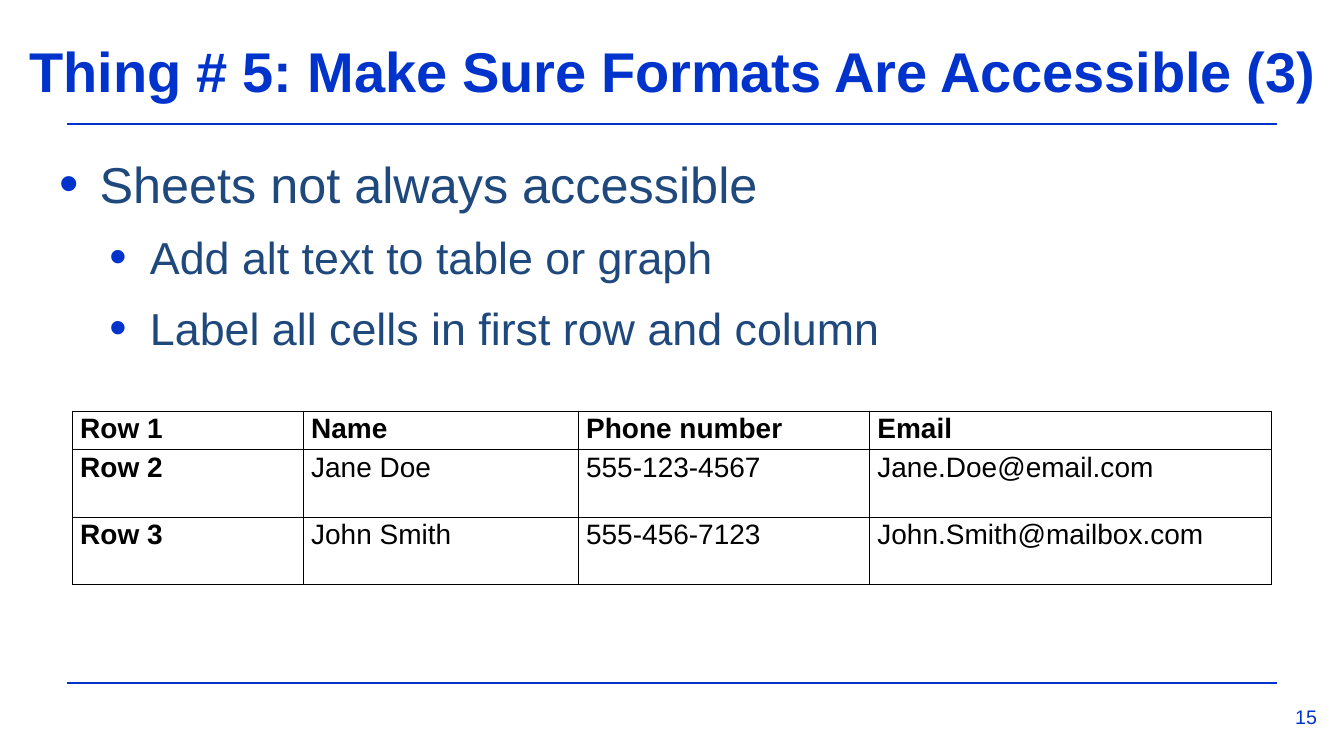
from lxml import etree
from pptx import Presentation
from pptx.dml.color import RGBColor
from pptx.enum import shapes, text
from pptx.oxml import ns
from pptx.util import Cm, Pt

TITLE = "Thing # 5: Make Sure Formats Are Accessible (3)"
PAGE = "15"
BULLETS = [  # level, text
    (0, "Sheets not always accessible"),
    (1, "Add alt text to table or graph"),
    (1, "Label all cells in first row and column"),
]
CONTACTS = [
    ("Row 1", "Name", "Phone number", "Email"),
    ("Row 2", "Jane Doe", "555-123-4567", "Jane.Doe@email.com"),
    ("Row 3", "John Smith", "555-456-7123", "John.Smith@mailbox.com"),
]
COL_WIDTHS = (5.82, 6.93, 7.34, 10.13)
ROW_HEIGHTS = (0.97, 1.7, 1.7)
RULE_LEFT, RULE_WIDTH, RULE_TOPS = 1.7, 30.48, (3.12, 17.22)

THEME = {
    "font": "Arial",
    "accent": RGBColor(0x00, 0x33, 0xCC),
    "body": RGBColor(0x1F, 0x49, 0x7D),
    "ink": RGBColor(0x00, 0x00, 0x00),
    "title_size": 40,
    "level_sizes": (36, 32),
    "table_size": 20,
    "page_size": 14,
}


def set_all(obj, values):
    for name, value in values.items():
        setattr(obj, name, value)


def write(p, words, size, color, bold=False):
    r = p.add_run()
    r.text = words
    set_all(r.font, {"name": THEME["font"], "size": Pt(size), "bold": bold})
    r.font.color.rgb = color
    return r


def add_box(slide, left, top, width, height, inset_top=0):
    sp = slide.shapes.add_textbox(Cm(left), Cm(top), Cm(width), Cm(height))
    tf = sp.text_frame
    set_all(tf, {"word_wrap": True, "margin_left": 0, "margin_right": 0,
                 "margin_top": Cm(inset_top), "margin_bottom": 0})
    return tf


def add_bullet(p, level):
    pPr = p._p.get_or_add_pPr()
    pPr.set("marL", str(Cm(1.04 + 1.27 * level)))
    pPr.set("indent", str(-Cm(1.02)))
    color = etree.SubElement(pPr, ns.qn("a:buClr"))
    etree.SubElement(color, ns.qn("a:srgbClr"), val=str(THEME["accent"]))
    etree.SubElement(pPr, ns.qn("a:buSzPct"), val="110000")
    etree.SubElement(pPr, ns.qn("a:buFont"), typeface=THEME["font"])
    etree.SubElement(pPr, ns.qn("a:buChar"), char="•")


def add_borders(cell):
    tcPr = cell._tc.get_or_add_tcPr()
    for side in ("lnL", "lnR", "lnT", "lnB"):
        ln = etree.SubElement(tcPr, ns.qn("a:" + side), w=str(Pt(1)))
        fill = etree.SubElement(ln, ns.qn("a:solidFill"))
        etree.SubElement(fill, ns.qn("a:srgbClr"), val=str(THEME["ink"]))


def add_rule(slide, top):
    line = slide.shapes.add_connector(
        shapes.MSO_CONNECTOR.STRAIGHT, Cm(RULE_LEFT), Cm(top),
        Cm(RULE_LEFT + RULE_WIDTH), Cm(top))
    line.line.color.rgb = THEME["accent"]
    line.line.width = Pt(1.56)
    etree.SubElement(line._element.spPr, ns.qn("a:effectLst"))


def add_contacts(slide, left, top):
    """Table whose first row and first column are bold labels."""
    table = slide.shapes.add_table(
        len(CONTACTS), len(COL_WIDTHS), Cm(left), Cm(top),
        Cm(sum(COL_WIDTHS)), Cm(sum(ROW_HEIGHTS))).table
    set_all(table, {"first_row": False, "horz_banding": False})
    for col, width in zip(table.columns, COL_WIDTHS):
        col.width = Cm(width)
    for i, (row, height) in enumerate(zip(table.rows, ROW_HEIGHTS)):
        row.height = Cm(height)
        for j, cell in enumerate(row.cells):
            set_all(cell, {"margin_left": Cm(0.19), "margin_right": Cm(0.19),
                           "margin_top": 0, "margin_bottom": 0})
            add_borders(cell)
            cell.fill.background()
            p = cell.text_frame.paragraphs[0]
            p.line_spacing = 1.07
            write(p, CONTACTS[i][j], THEME["table_size"], THEME["ink"],
                  bold=i == 0 or j == 0)


def main():
    prs = Presentation()
    set_all(prs, {"slide_width": Cm(33.87), "slide_height": Cm(19.05)})
    slide = prs.slides.add_slide(prs.slide_layouts[6])

    for top in RULE_TOPS:
        add_rule(slide, top)

    p = add_box(slide, 0.08, 0.84, 33.73, 1.75, inset_top=0.08).paragraphs[0]
    p.alignment = text.PP_ALIGN.CENTER
    r = write(p, TITLE, THEME["title_size"], THEME["accent"], bold=True)
    r.font._element.set("spc", "-10")

    tf = add_box(slide, 1.47, 3.61, 31.85, 7.26, inset_top=0.24)
    for i, (level, words) in enumerate(BULLETS):
        p = tf.add_paragraph() if i else tf.paragraphs[0]
        p.level = level
        if i:
            p.space_before = Pt(12)
        add_bullet(p, level)
        write(p, words, THEME["level_sizes"][level], THEME["body"])

    add_contacts(slide, 1.83, 10.36)

    p = add_box(slide, 32.64, 17.78, 0.69, 0.64).paragraphs[0]
    p.line_spacing = Pt(16.5)
    write(p, PAGE, THEME["page_size"], THEME["accent"])

    prs.save("out.pptx")


if __name__ == "__main__":
    main()
